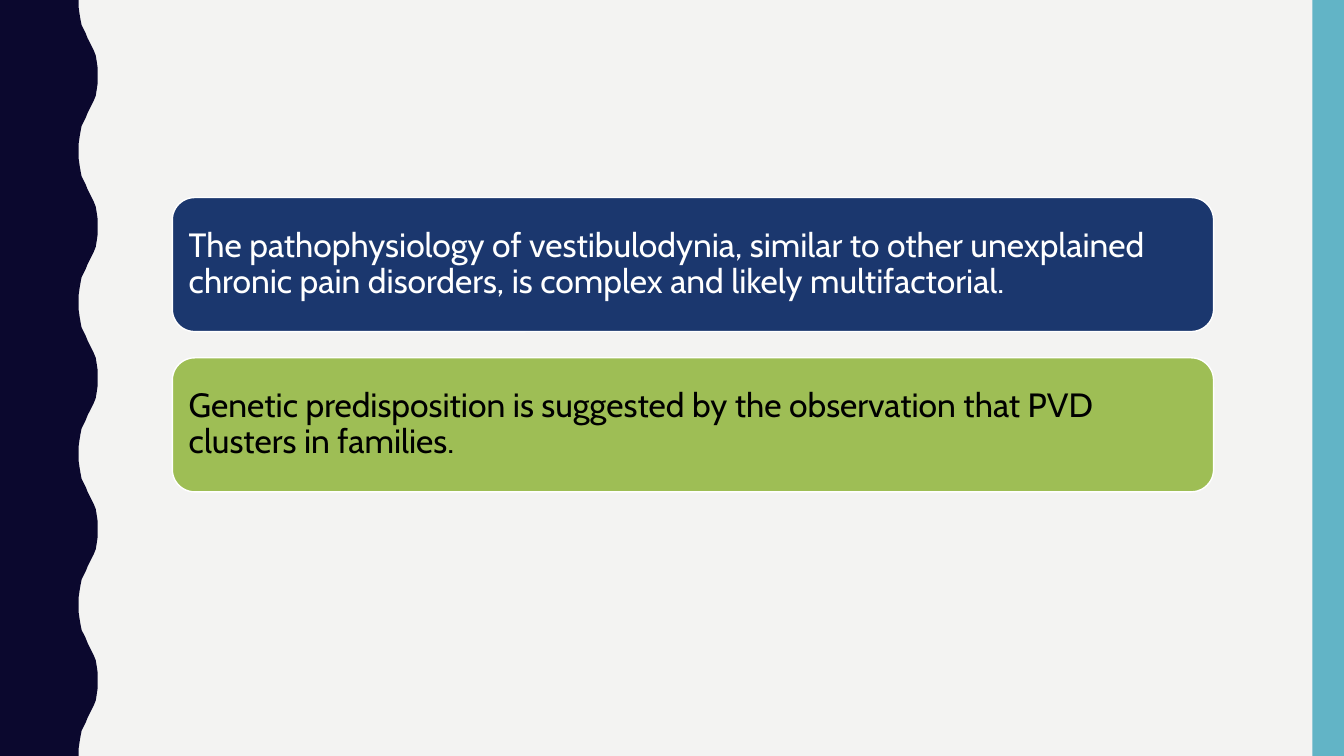
from pptx import Presentation
from pptx import util as u
from pptx.dml import color
from pptx.enum import shapes, text

PX = 9144
WIDTH, HEIGHT = 1333, 750
WAVE = 150


def rgb(value):
    return color.RGBColor.from_string(value)


def write(shape, content, font="Cabin", size=24, ink="000000", inset=10):
    frame = shape.text_frame
    frame.word_wrap = True
    frame.vertical_anchor = text.MSO_ANCHOR.MIDDLE
    frame.margin_left = frame.margin_right = inset * PX
    frame.margin_top = frame.margin_bottom = inset * PX
    paragraph = frame.paragraphs[0]
    paragraph.text = content
    paragraph.alignment = text.PP_ALIGN.LEFT
    paragraph.line_spacing = 0.9
    paragraph.font.name = font
    paragraph.font.size = u.Pt(size)
    paragraph.font.color.rgb = rgb(ink)


presentation = Presentation()
presentation.slide_width = u.Inches(13.333)
presentation.slide_height = HEIGHT * PX
slide = presentation.slides.add_slide(presentation.slide_layouts[6])
slide.background.fill.solid()
slide.background.fill.fore_color.rgb = rgb("F3F3F2")

half_wave = [
    (78, 0), (78, 7), (79, 14), (80, 20), (81, 25), (83, 29), (85, 33), (87, 38),
    (89, 42), (91, 46), (93, 50), (95, 55), (96, 61), (97, 68), (97, 75),
]
full_wave = half_wave + [(x, WAVE - y) for x, y in half_wave[-2::-1]]
edge = [(x, top + y) for top in range(0, HEIGHT, WAVE) for x, y in full_wave]
builder = slide.shapes.build_freeform(0, 0, scale=PX)
builder.add_line_segments(edge + [(0, HEIGHT)], close=True)
wavy_band = builder.convert_to_shape()

right_band = slide.shapes.add_shape(
    shapes.MSO_SHAPE.RECTANGLE, 1302 * PX, 0, presentation.slide_width - 1302 * PX, HEIGHT * PX
)
for band, fill in ((wavy_band, "0B082E"), (right_band, "62B4C6")):
    band.shadow.inherit = False
    band.fill.solid()
    band.fill.fore_color.rgb = rgb(fill)
    band.line.fill.background()

statements = [
    ("The pathophysiology of vestibulodynia, similar to other unexplained "
     "chronic pain disorders, is complex and likely multifactorial.", "1B376E", "FFFFFF"),
    ("Genetic predisposition is suggested by the observation that PVD "
     "clusters in families.", "9EBE55", "000000"),
]
for index, (statement, fill, ink) in enumerate(statements):
    card = slide.shapes.add_shape(
        shapes.MSO_SHAPE.ROUNDED_RECTANGLE, 171 * PX, (196 + 159 * index) * PX, 1033 * PX, 133 * PX
    )
    card.shadow.inherit = False
    card.fill.solid()
    card.fill.fore_color.rgb = rgb(fill)
    card.line.color.rgb = rgb("FFFFFF")
    card.line.width = u.Pt(1)
    write(card, statement, ink=ink)

presentation.save("out.pptx")
